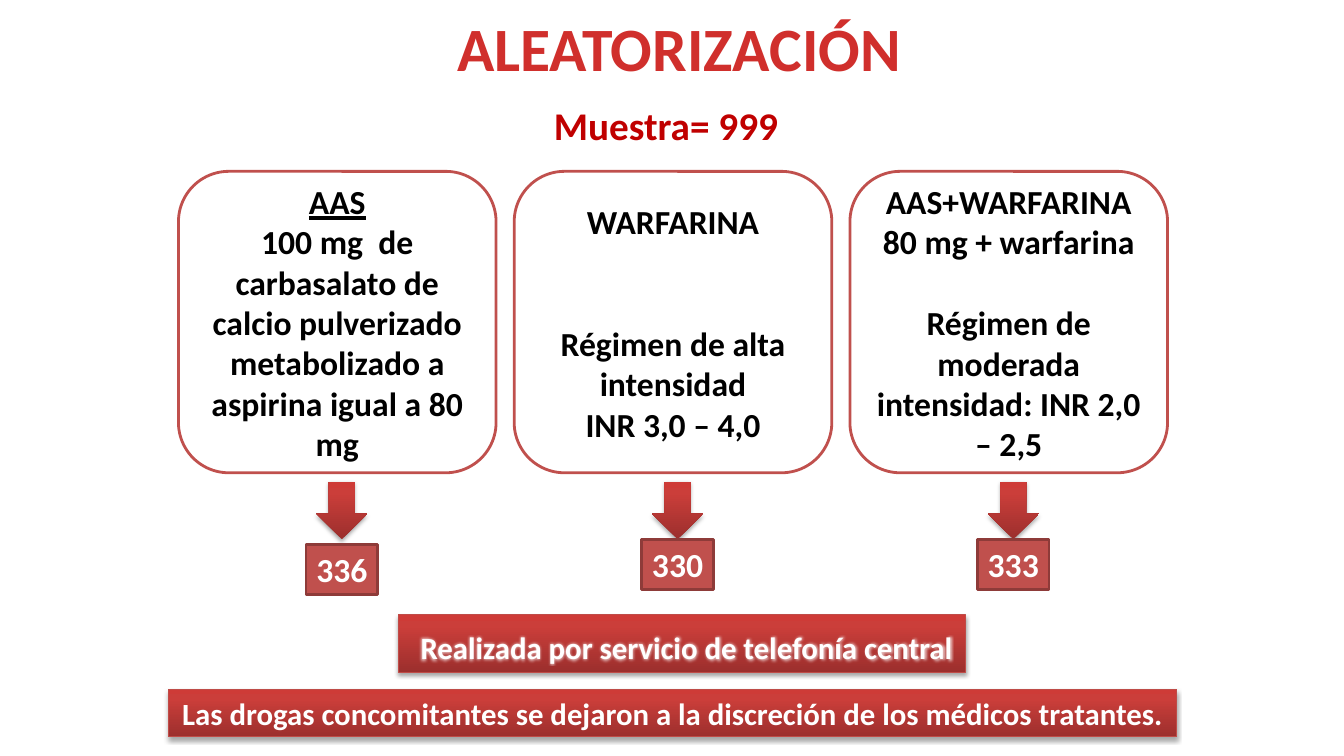
from lxml import etree
from pptx import Presentation
from pptx.dml.color import RGBColor
from pptx.enum import shapes, text
from pptx.oxml import ns, parse_xml
from pptx.util import Inches, Pt

WHITE = RGBColor(255, 255, 255)
BLACK = RGBColor(0, 0, 0)
RED = RGBColor(0xC0, 0x50, 0x4D)
DARK = RGBColor(0x8E, 0x3B, 0x39)
EDGE = RGBColor(0xBF, 0x4C, 0x48)
TITLE = RGBColor(0xD0, 0x2F, 0x2C)
SAMPLE = RGBColor(0xC0, 0, 0)
RAMP = [(0, "9C2F2D"), (80, "CB3E3A"), (100, "CE3B37")]

ARMS = [
    ([("AAS", 0, True),
      ("100 mg  de carbasalato de calcio pulverizado metabolizado a aspirina igual a 80 mg", 0, False)],
     "336", 5.4),
    ([("WARFARINA", 0, False), ("Régimen de alta intensidad", 2, False),
      ("INR 3,0 – 4,0", 0, False)],
     "330", 5.35),
    ([("AAS+WARFARINA", 0, False), ("80 mg + warfarina", 0, False),
      ("Régimen de moderada intensidad: INR 2,0 – 2,5", 1, False)],
     "333", 5.35),
]
HEADS = [
    ("ALEATORIZACIÓN", (2.64, 0.05, 8.19, 0.84), 44, TITLE),
    ("Muestra= 999", (4.42, 0.92, 4.37, 0.63), 28, SAMPLE),
]
BANDS = [
    ([(" ", 28), ("Realizada por servicio de telefonía central", 22)],
     (3.95, 6.1, 5.63, 0.57), False, True),
    ([("Las drogas concomitantes se dejaron a la discreción de los médicos tratantes.", 22)],
     (1.67, 6.84, 10, 0.47), True, False),
]
LEFT, PITCH, TOP, WIDE, TALL = 1.77, 3.33, 1.7, 3.15, 2.99
AXIS, ROW = 1.62, 29.3
A = 'xmlns:a="%s"' % ns.nsuri("a")

deck = Presentation()
deck.slide_width, deck.slide_height = Inches(13.33), Inches(7.5)
slide = deck.slides.add_slide(deck.slide_layouts[6])


def block(kind, area, fill=None, line=None, width=2):
    part = slide.shapes.add_shape(kind, *map(Inches, area))
    part.shadow.inherit = False
    if fill is not None:
        part.fill.solid()
        part.fill.fore_color.rgb = fill
    if line is None:
        part.line.fill.background()
    else:
        part.line.color.rgb = line
        part.line.width = Pt(width)
    return part


def gloss(part):
    props = part._element.spPr
    part.fill.background()
    stops = "".join(f'<a:gs pos="{p * 1000}"><a:srgbClr val="{c}"/></a:gs>' for p, c in RAMP)
    ramp = parse_xml(f'<a:gradFill {A} rotWithShape="1"><a:gsLst>{stops}</a:gsLst>'
                     '<a:lin ang="16200000" scaled="0"/></a:gradFill>')
    props.replace(props.find(ns.qn("a:noFill")), ramp)
    shade = etree.SubElement(props.find(ns.qn("a:effectLst")), ns.qn("a:outerShdw"),
                             blurRad="40000", dist="23000", dir="5400000", rotWithShape="0")
    tint = etree.SubElement(shade, ns.qn("a:srgbClr"), val="000000")
    etree.SubElement(tint, ns.qn("a:alpha"), val="35000")


def frame(part, anchor, wrap=True):
    body = part.text_frame
    body.word_wrap = wrap
    body.vertical_anchor = anchor
    return body


def write(para, words, size, color, under=False):
    para.alignment = text.PP_ALIGN.CENTER
    run = para.add_run()
    run.text = words
    font = run.font
    font.size, font.bold, font.name = Pt(size), True, "Calibri"
    font.color.rgb = color
    if under:
        font.underline = True
    return run


def glow(run):
    halo = parse_xml(f'<a:effectLst {A}><a:glow rad="45500"><a:srgbClr val="FFFFFF">'
                     '<a:alpha val="65000"/></a:srgbClr></a:glow></a:effectLst>')
    run.font._element.find(ns.qn("a:solidFill")).addnext(halo)


KIND = shapes.MSO_SHAPE
MID, HIGH = text.MSO_ANCHOR.MIDDLE, text.MSO_ANCHOR.TOP

for runs, area, wrap, lit in BANDS:
    band = block(KIND.RECTANGLE, area, line=EDGE, width=0.75)
    gloss(band)
    para = frame(band, HIGH, wrap).paragraphs[0]
    for words, size in runs:
        run = write(para, words, size, WHITE)
        if lit:
            glow(run)

for col, (lines, count, drop) in enumerate(ARMS):
    left = LEFT + PITCH * col
    mid = left + AXIS
    card = block(KIND.ROUNDED_RECTANGLE, (left, TOP, WIDE, TALL), WHITE, RED)
    body = frame(card, MID)
    for row, (words, gap, under) in enumerate(lines):
        para = body.add_paragraph() if row else body.paragraphs[0]
        if gap:
            para.space_before = Pt(gap * ROW)
        write(para, words, 24, BLACK, under)
    gloss(block(KIND.DOWN_ARROW, (mid - 0.255, 4.78, 0.51, 0.57)))
    tag = block(KIND.RECTANGLE, (mid - 0.355, drop, 0.71, 0.5), RED, DARK)
    write(frame(tag, HIGH, False).paragraphs[0], count, 24, WHITE)

for words, area, size, color in HEADS:
    head = slide.shapes.add_textbox(*map(Inches, area))
    write(frame(head, MID).paragraphs[0], words, size, color)

deck.save("out.pptx")
